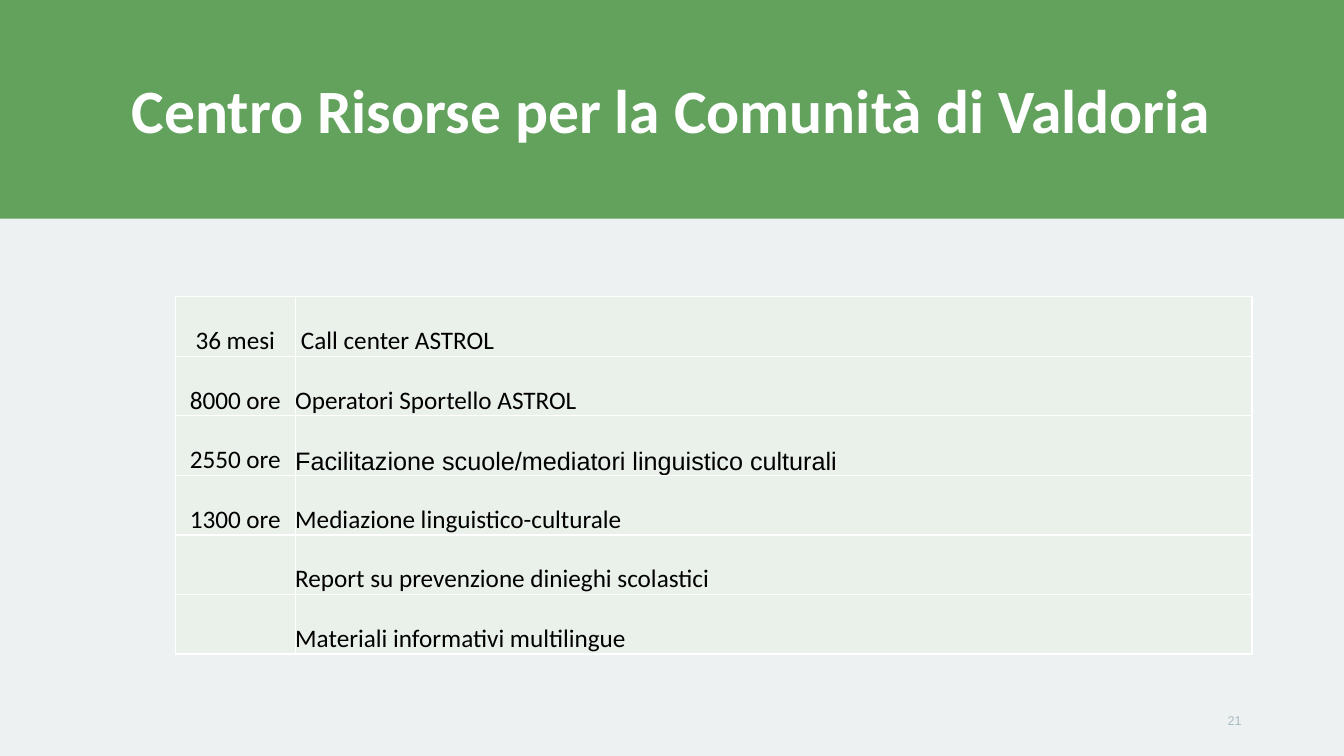
from dataclasses import dataclass

from lxml.etree import SubElement
from pptx import Presentation
from pptx.dml.color import RGBColor as RGB
from pptx.enum.shapes import MSO_SHAPE as Shape
from pptx.enum.text import MSO_ANCHOR as Anchor, MSO_AUTO_SIZE as AutoSize, PP_ALIGN as Align
from pptx.oxml.ns import qn
from pptx.util import Cm, Pt

HEADING = "Centro Risorse per la Comunità di Valdoria"
PAGE = "21"
SERVICES = [
    ("36 mesi", " Call center ASTROL"),
    ("8000 ore", "Operatori Sportello ASTROL"),
    ("2550 ore", "Facilitazione scuole/mediatori linguistico culturali"),
    ("1300 ore", "Mediazione linguistico-culturale"),
    ("", "Report su prevenzione dinieghi scolastici"),
    ("", "Materiali informativi multilingue"),
]
ARIAL_SERVICES = {"Facilitazione scuole/mediatori linguistico culturali"}


@dataclass(frozen=True)
class Theme:
    background: str = "EDF1F2"
    band: str = "62A25D"
    cell: str = "EAF0EA"
    white: str = "FFFFFF"
    text: str = "000000"
    page: str = "A7BBC0"
    main_font: str = "Calibri"
    alt_font: str = "Arial"
    heading_size: int = 44
    body_size: int = 18
    page_size: int = 9
    border: int = 1


THEME = Theme()
SLIDE_WIDTH, SLIDE_HEIGHT = Cm(33.87), Cm(19.05)
BAND_HEIGHT = Cm(5.51)
COLUMN_WIDTHS = Cm(3.02), Cm(24.11)
ROW_HEIGHT = Cm(1.5)


def paint(target, color):
    target.fill.solid()
    target.fill.fore_color.rgb = RGB.from_string(color)


def style(paragraph, font, size, color, align, bold=False):
    paragraph.alignment = align
    paragraph.font.name = font
    paragraph.font.size = Pt(size)
    paragraph.font.bold = bold
    paragraph.font.color.rgb = RGB.from_string(color)


def add_borders(cell):
    properties = cell._tc.get_or_add_tcPr()
    for index, side in enumerate(("lnL", "lnR", "lnT", "lnB")):
        line = SubElement(properties, qn(f"a:{side}"), w=str(Pt(THEME.border)))
        fill = SubElement(line, qn("a:solidFill"))
        SubElement(fill, qn("a:srgbClr"), val=THEME.white)
        properties.insert(index, line)


def add_heading(slide):
    band = slide.shapes.add_shape(Shape.RECTANGLE, 0, 0, SLIDE_WIDTH, BAND_HEIGHT)
    band.shadow.inherit = False
    paint(band, THEME.band)
    band.line.fill.background()
    slide.shapes._spTree.insert(2, band._element)

    heading = slide.shapes.title
    heading.left, heading.top = Cm(2.33), Cm(1.01)
    heading.width, heading.height = Cm(29.21), Cm(3.68)
    frame = heading.text_frame
    frame.text = HEADING
    frame.auto_size = AutoSize.NONE
    frame.vertical_anchor = Anchor.MIDDLE
    paragraph = frame.paragraphs[0]
    paragraph.line_spacing = 0.9
    style(paragraph, THEME.main_font, THEME.heading_size, THEME.white, Align.CENTER, True)


def add_page(slide):
    page = slide.shapes.add_textbox(Cm(23.92), Cm(17.66), Cm(7.62), Cm(1.01))
    frame = page.text_frame
    frame.word_wrap = True
    frame.vertical_anchor = Anchor.MIDDLE
    frame.text = PAGE
    style(frame.paragraphs[0], THEME.alt_font, THEME.page_size, THEME.page, Align.RIGHT)


def add_services(slide):
    services = slide.shapes.add_table(
        len(SERVICES), len(COLUMN_WIDTHS), Cm(4.42), Cm(7.48),
        sum(COLUMN_WIDTHS), ROW_HEIGHT * len(SERVICES),
    ).table
    services.first_row = services.horz_banding = False
    for column, width in zip(services.columns, COLUMN_WIDTHS):
        column.width = width
    for row, entry in enumerate(SERVICES):
        services.rows[row].height = ROW_HEIGHT
        for column, (wording, align) in enumerate(zip(entry, (Align.CENTER, Align.LEFT))):
            cell = services.cell(row, column)
            cell.margin_left = cell.margin_right = cell.margin_top = cell.margin_bottom = 0
            cell.vertical_anchor = Anchor.BOTTOM
            cell.text = wording
            font = THEME.alt_font if wording in ARIAL_SERVICES else THEME.main_font
            style(cell.text_frame.paragraphs[0], font, THEME.body_size, THEME.text, align)
            paint(cell, THEME.cell)
            add_borders(cell)


def main():
    deck = Presentation()
    deck.slide_width, deck.slide_height = SLIDE_WIDTH, SLIDE_HEIGHT
    slide = deck.slides.add_slide(deck.slide_layouts[5])
    paint(slide.background, THEME.background)
    add_heading(slide)
    add_services(slide)
    add_page(slide)
    deck.save("out.pptx")


if __name__ == "__main__":
    main()
